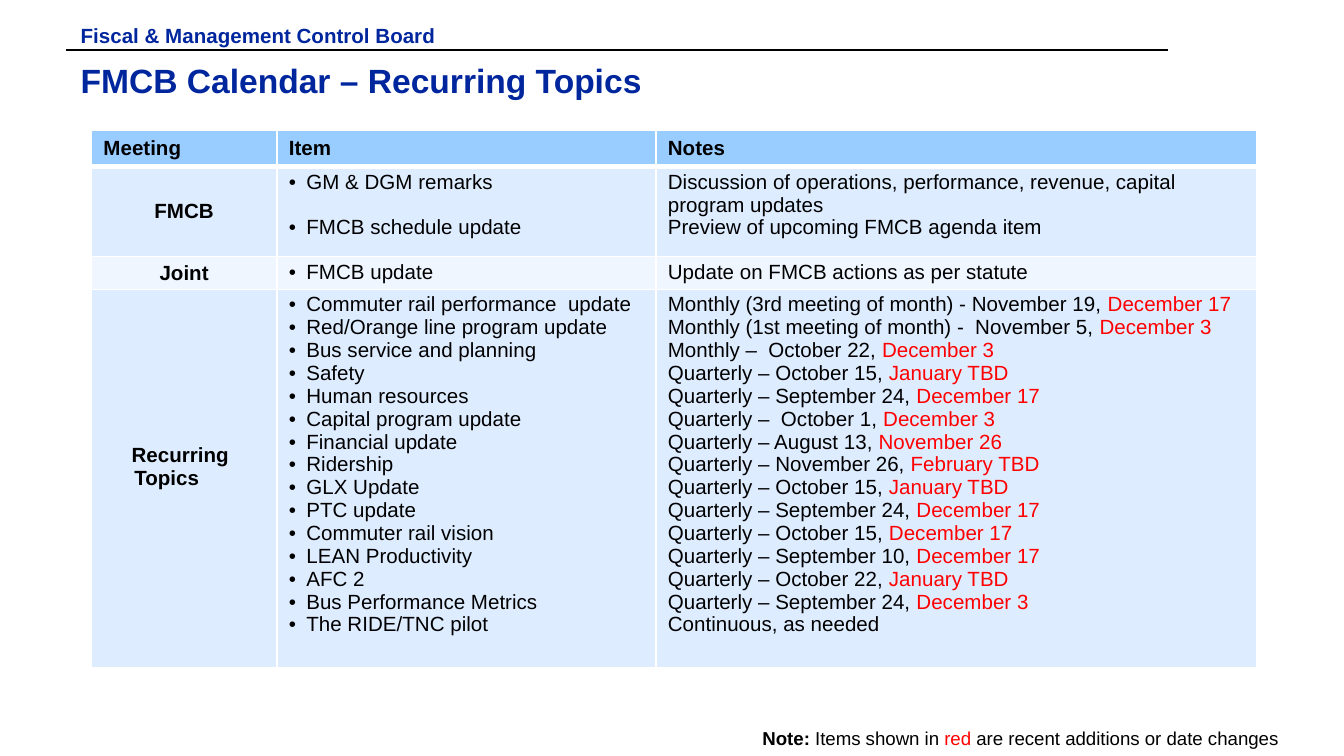
from lxml import etree
from pptx import Presentation
from pptx.dml.color import RGBColor
from pptx.enum import shapes, text
from pptx.oxml.ns import qn
from pptx.util import Inches, Pt

NAVY, RED, BLACK, WHITE = "00269E", "FF0000", "000000", "FFFFFF"
HEAD, BAND, PALE = "99CCFF", "DEECFF", "EFF6FF"
COLS = [1.38, 2.82, 4.47]
ROWS = [0.27, 0.67, 0.24, 2.81]

TOPICS = [
    ("Commuter rail performance  update", "Monthly (3rd meeting of month) - November 19, ", "December 17"),
    ("Red/Orange line program update", "Monthly (1st meeting of month) -  November 5, ", "December 3"),
    ("Bus service and planning", "Monthly –  October 22, ", "December 3"),
    ("Safety", "Quarterly – October 15, ", "January TBD"),
    ("Human resources", "Quarterly – September 24, ", "December 17"),
    ("Capital program update", "Quarterly –  October 1, ", "December 3"),
    ("Financial update", "Quarterly – August 13, ", "November 26"),
    ("Ridership", "Quarterly – November 26, ", "February TBD"),
    ("GLX Update", "Quarterly – October 15, ", "January TBD"),
    ("PTC update", "Quarterly – September 24, ", "December 17"),
    ("Commuter rail vision", "Quarterly – October 15, ", "December 17"),
    ("LEAN Productivity", "Quarterly – September 10, ", "December 17"),
    ("AFC 2", "Quarterly – October 22, ", "January TBD"),
    ("Bus Performance Metrics", "Quarterly – September 24, ", "December 3"),
    ("The RIDE/TNC pilot", "Continuous, as needed", ""),
]


def color(code):
    return RGBColor.from_string(code)


def write(frame, paras, size=11, tint=BLACK, bold=False, align=None,
          bullet=False, lefts=(), gap=0):
    """Each paragraph is a string or a list of (text, colour, bold) runs."""
    for i, runs in enumerate(paras):
        para = frame.paragraphs[0] if i == 0 else frame.add_paragraph()
        props = para._p.get_or_add_pPr()
        if bullet:
            props.set("marL", str(Inches(0.13)))
            props.set("indent", str(-Inches(0.13)))
            etree.SubElement(props, qn("a:buFont")).set("typeface", "Arial")
            etree.SubElement(props, qn("a:buChar")).set("char", "•")
        elif lefts:
            props.set("marL", str(Inches(lefts[i])))
        para.alignment = align
        if gap and i:
            para.space_before = Pt(gap)
        if isinstance(runs, str):
            runs = [(runs, tint, bold)]
        for words, hue, heavy in runs:
            run = para.add_run()
            run.text = words
            font = run.font
            font.name, font.size, font.bold = "Arial", Pt(size), heavy
            font.color.rgb = color(hue)


def add_text(slide, box, paras, top=0.04, **fmt):
    frame = slide.shapes.add_textbox(*map(Inches, box)).text_frame
    frame.word_wrap = True
    frame.margin_left = frame.margin_right = Inches(0.09)
    frame.margin_top, frame.margin_bottom = Inches(top), Inches(0.04)
    write(frame, paras, **fmt)


def add_header(slide, x, y):
    line = slide.shapes.add_connector(
        shapes.MSO_CONNECTOR.STRAIGHT, Inches(x - 0.02), Inches(y + 0.25),
        Inches(x + 8.18), Inches(y + 0.25))
    line.line.color.rgb, line.line.width = color(BLACK), Pt(1)
    etree.SubElement(line._element.spPr, qn("a:effectLst"))
    add_text(slide, (x, y + 0.28, 8.36, 0.48),
             ["FMCB Calendar – Recurring Topics"],
             top=0.05, size=18, tint=NAVY, bold=True)
    add_text(slide, (x, y, 3.41, 0.19), ["Fiscal & Management Control Board"],
             top=0.05, tint=NAVY, bold=True)


def add_border(cell, side, width):
    edge = etree.SubElement(cell._tc.get_or_add_tcPr(), qn("a:" + side))
    edge.set("w", str(Pt(width)))
    fill = etree.SubElement(edge, qn("a:solidFill"))
    etree.SubElement(fill, qn("a:srgbClr")).set("val", WHITE)


def fill_cell(cell, paras, fill, row, middle=False, foot=0.03, **fmt):
    cell.margin_left = cell.margin_right = Inches(0.09)
    cell.margin_top, cell.margin_bottom = Inches(0.03), Inches(foot)
    cell.vertical_anchor = text.MSO_ANCHOR.MIDDLE if middle else text.MSO_ANCHOR.TOP
    for side in ("lnL", "lnR", "lnT", "lnB"):
        thick = (row, side) in ((0, "lnB"), (1, "lnT"))
        add_border(cell, side, 3 if thick else 1)
    cell.fill.solid()
    cell.fill.fore_color.rgb = color(fill)
    write(cell.text_frame, paras, **fmt)


def add_calendar(slide, x, y):
    grid = slide.shapes.add_table(
        len(ROWS), len(COLS), Inches(x), Inches(y),
        Inches(sum(COLS)), Inches(sum(ROWS))).table
    for col, width in zip(grid.columns, COLS):
        col.width = Inches(width)
    for row, height in zip(grid.rows, ROWS):
        row.height = Inches(height)

    for c, name in enumerate(("Meeting", "Item", "Notes")):
        fill_cell(grid.cell(0, c), [name], HEAD, 0, middle=True, bold=True)

    mid = {"align": text.PP_ALIGN.CENTER}
    dates = [[(when, BLACK, False)] + ([(new, RED, False)] if new else [])
             for _, when, new in TOPICS]
    body = [
        (BAND, ["FMCB"], mid, ["GM & DGM remarks", "FMCB schedule update"],
         ["Discussion of operations, performance, revenue, capital program updates",
          "Preview of upcoming FMCB agenda item"], 12.25),
        (PALE, ["Joint"], mid, ["FMCB update"],
         ["Update on FMCB actions as per statute"], 0),
        (BAND, ["Recurring", "Topics"], {"lefts": (0.21, 0.23), "foot": 0.2},
         [topic[0] for topic in TOPICS], dates, 0),
    ]
    for r, (fill, name, fmt, items, notes, gap) in enumerate(body, 1):
        fill_cell(grid.cell(r, 0), name, fill, r, middle=True, bold=True, **fmt)
        fill_cell(grid.cell(r, 1), items, fill, r, bullet=True, gap=gap)
        fill_cell(grid.cell(r, 2), notes, fill, r)


def add_note(slide, x, y):
    add_text(slide, (x, y, 4.2, 0.26),
             [[("Note: ", BLACK, True), ("Items shown in ", BLACK, False),
               ("red", RED, False),
               (" are recent additions or date changes", BLACK, False)]],
             size=10, align=text.PP_ALIGN.RIGHT)


def main():
    deck = Presentation()
    deck.slide_width = Inches(10)
    deck.slide_height = deck.slide_width * 9 // 16
    slide = deck.slides.add_slide(deck.slide_layouts[6])
    add_header(slide, 0.51, 0.12)
    add_calendar(slide, 0.68, 0.97)
    add_note(slide, 5.4, 5.37)
    deck.save("out.pptx")


if __name__ == "__main__":
    main()
